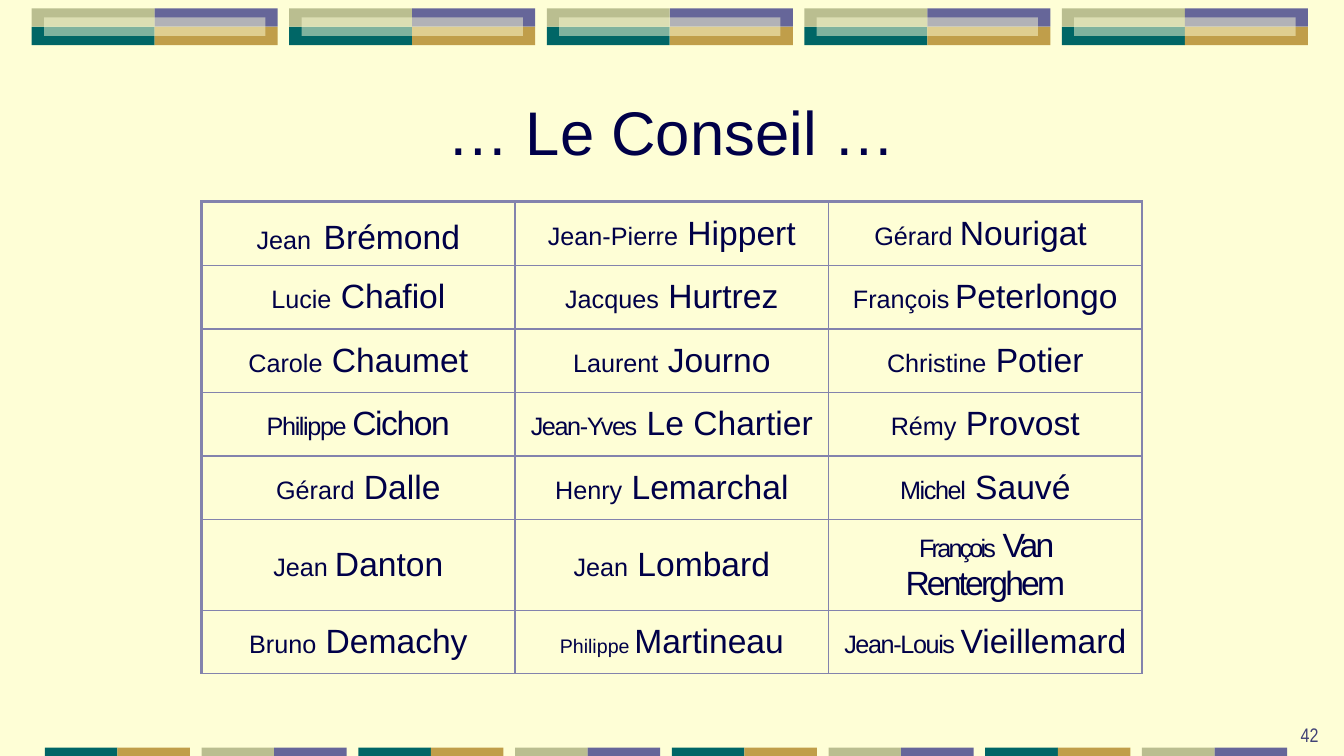
import pptx
import pptx.util
import pptx.dml.color
import pptx.enum.shapes
import pptx.enum.text
import pptx.oxml
import pptx.oxml.ns

Cm, Pt = pptx.util.Cm, pptx.util.Pt
Anchor, Align = pptx.enum.text.MSO_ANCHOR, pptx.enum.text.PP_ALIGN

TITLE = "… Le Conseil …"
PAGE = "42"
MEMBERS = [
    [("Jean", "Brémond"), ("Jean-Pierre", " Hippert"), ("Gérard ", "Nourigat ")],
    [("Lucie", " Chafiol"), ("Jacques", " Hurtrez"), ("François", "Peterlongo")],
    [("Carole", " Chaumet"), ("Laurent", " Journo"), ("Christine", " Potier")],
    [("Philippe ", "Cichon"), ("Jean-Yves", " Le Chartier"), ("Rémy", " Provost")],
    [("Gérard", " Dalle"), ("Henry", " Lemarchal"), ("Michel", " Sauvé")],
    [("Jean ", "Danton"), ("Jean", " Lombard"), ("François", " Van Renterghem")],
    [("Bruno", " Demachy"), ("Philippe", "Martineau"), ("Jean-Louis ", "Vieillemard")],
]
# Exceptions by surname, in points
GAP_SIZE = {"Brémond": 32, "Peterlongo": 14, "Martineau": 12}
FIRST_SIZE = {"Martineau": 14}
TRACKING = {"Cichon": (-1, -1), "Le Chartier": (-1, 0), "Sauvé": (-1, 0),
            "Van Renterghem": (-2, -2), "Vieillemard": (-1, 0)}

COLORS = {"cream": "FEFED6", "olive": "BABE90", "violet": "666699", "teal": "006666",
          "gold": "C09E4A", "navy": "000048", "slate": "404176", "rule": "8383AD"}
FONT, PAGE_FONT = "Arial", "Arial Narrow"

BANDS, BAND_LEFT, BAND_TOP, BAND_PITCH = 5, 0.8, 0.21, 6.49
TILE_W, TILE_H = 3.1, 0.465
BAND_TILES = [["olive", "violet"], ["teal", "gold"]]
INSET_X, INSET_Y = 0.31, 0.23
PAIRS, PAIR_LEFT, PAIR_TOP, PAIR_PITCH = 8, 1.13, 18.84, 3.95
PAIR_W, PAIR_H = 1.83, 0.21
PAIR_TILES = [["teal", "gold"], ["olive", "violet"]]
TABLE_LEFT, TABLE_TOP, COL_W, ROW_H = 5.08, 5.08, 7.9, 1.6
THIN, THICK = 1, 2.25


def rgb(name):
    return pptx.dml.color.RGBColor.from_string(COLORS[name])


def add_tile(slide, x, y, w, h, color, opacity=None):
    sp = slide.shapes.add_shape(pptx.enum.shapes.MSO_SHAPE.RECTANGLE,
                                Cm(x), Cm(y), Cm(w), Cm(h))
    sp.shadow.inherit = False
    sp.fill.solid()
    sp.fill.fore_color.rgb = rgb(color)
    sp.line.fill.background()
    if opacity:
        clr = sp.fill._xPr.find(".//" + pptx.oxml.ns.qn("a:srgbClr"))
        clr.append(pptx.oxml.parse_xml(
            f'<a:alpha {pptx.oxml.ns.nsdecls("a")} val="{opacity * 1000}"/>'))


def add_text(slide, x, y, w, h, text, font, size, color, align, anchor):
    tf = slide.shapes.add_textbox(Cm(x), Cm(y), Cm(w), Cm(h)).text_frame
    tf.word_wrap = True
    tf.vertical_anchor = anchor
    p = tf.paragraphs[0]
    p.text = text
    p.alignment = align
    p.font.name, p.font.size = font, Pt(size)
    p.font.color.rgb = rgb(color)


def set_borders(cell, widths):
    """Draw the sides in the order left, right, top, bottom."""
    tc_pr = cell._tc.get_or_add_tcPr()
    for i, (side, width) in enumerate(zip("LRTB", widths)):
        tc_pr.insert(i, pptx.oxml.parse_xml(
            f'<a:ln{side} {pptx.oxml.ns.nsdecls("a")} w="{Pt(width)}"><a:solidFill>'
            f'<a:srgbClr val="{COLORS["rule"]}"/></a:solidFill></a:ln{side}>'))


def fill_name(cell, first, last):
    surname = last.strip()
    tracking = TRACKING.get(surname, (0, 0))
    runs = [(first, FIRST_SIZE.get(surname, 18), tracking[0]), (last, 24, tracking[1])]
    if surname in GAP_SIZE:
        runs.insert(1, (" ", GAP_SIZE[surname], 0))
    p = cell.text_frame.paragraphs[0]
    p.alignment = Align.CENTER
    p.font.name = FONT
    for text, size, spacing in runs:
        r = p.add_run()
        r.text = text
        r.font.name, r.font.size = FONT, Pt(size)
        r.font.color.rgb = rgb("navy")
        if spacing:
            r.font._element.set("spc", str(spacing * 100))


def add_bands(slide):
    for i in range(BANDS):
        x = BAND_LEFT + i * BAND_PITCH
        for row, colors in enumerate(BAND_TILES):
            for col, color in enumerate(colors):
                add_tile(slide, x + col * TILE_W, BAND_TOP + row * TILE_H,
                         TILE_W, TILE_H, color)
        add_tile(slide, x + INSET_X, BAND_TOP + INSET_Y,
                 2 * (TILE_W - INSET_X), TILE_H, "cream", 50)
    for i in range(PAIRS):
        for col, color in enumerate(PAIR_TILES[i % 2]):
            add_tile(slide, PAIR_LEFT + i * PAIR_PITCH + col * PAIR_W, PAIR_TOP,
                     PAIR_W, PAIR_H, color)


def add_members(slide):
    rows, cols = len(MEMBERS), len(MEMBERS[0])
    table = slide.shapes.add_table(rows, cols, Cm(TABLE_LEFT), Cm(TABLE_TOP),
                                   Cm(cols * COL_W), Cm(rows * ROW_H)).table
    table.first_row = table.horz_banding = False
    for column in table.columns:
        column.width = Cm(COL_W)
    for i, names in enumerate(MEMBERS):
        table.rows[i].height = Cm(ROW_H)
        for j, (first, last) in enumerate(names):
            cell = table.cell(i, j)
            cell.vertical_anchor = Anchor.MIDDLE
            cell.fill.background()
            set_borders(cell, (THICK if j == 0 else THIN, THICK if j == cols - 1 else THIN,
                               THICK if i == 0 else THIN, THIN))
            fill_name(cell, first, last)


def main():
    prs = pptx.Presentation()
    prs.slide_width, prs.slide_height = Cm(33.87), Cm(19.05)
    slide = prs.slides.add_slide(prs.slide_layouts[6])
    slide.background.fill.solid()
    slide.background.fill.fore_color.rgb = rgb("cream")
    add_bands(slide)
    add_text(slide, 26.42, 18.24, 7.06, 0.69, PAGE, PAGE_FONT, 14, "slate",
             Align.RIGHT, Anchor.BOTTOM)
    add_text(slide, 2.54, 1.7, 28.78, 3.18, TITLE, FONT, 44, "navy",
             Align.CENTER, Anchor.MIDDLE)
    add_members(slide)
    prs.save("out.pptx")


if __name__ == "__main__":
    main()
